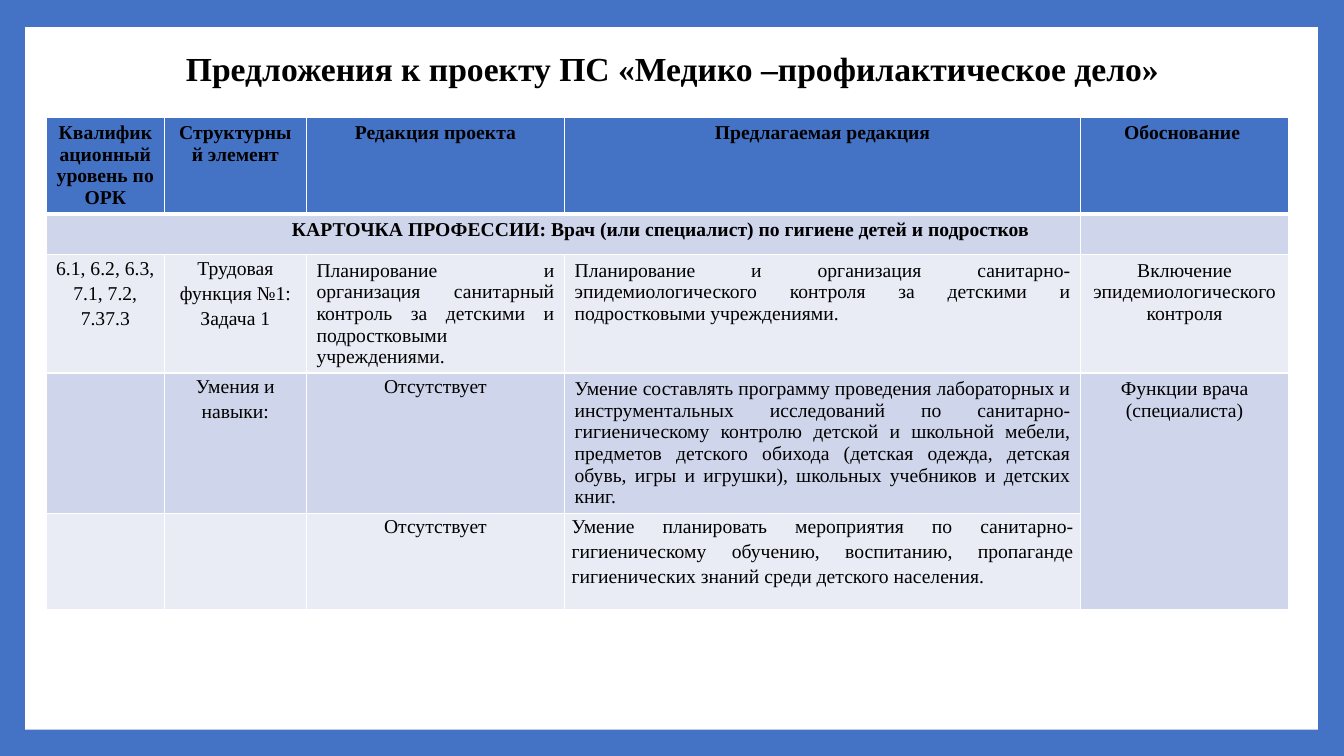
import pptx
import pptx.dml.color
import pptx.enum.shapes
import pptx.enum.text
import pptx.oxml
import pptx.oxml.ns
import pptx.util

Inches = pptx.util.Inches
Pt = pptx.util.Pt
RGBColor = pptx.dml.color.RGBColor
ALIGN = pptx.enum.text.PP_ALIGN

BLUE = RGBColor(0x44, 0x72, 0xC4)
BAND_DARK = RGBColor(0xCF, 0xD5, 0xEA)
BAND_LIGHT = RGBColor(0xE9, 0xEB, 0xF5)
WHITE = RGBColor(0xFF, 0xFF, 0xFF)
BLACK = RGBColor(0, 0, 0)

ROW_FILLS = [BLUE, BAND_DARK, BAND_LIGHT, BAND_DARK, BAND_LIGHT]
COL_WIDTHS = [1.17, 1.41, 2.56, 5.12, 2.06]
ROW_HEIGHTS = [0.79, 0.29, 0.8, 1.02, 0.96]
HEADER_LINE = 3
GRID_LINE = 1

TIGHT = {
    "margin_left": Inches(0.07),
    "margin_right": Inches(0.07),
    "margin_top": 0,
    "margin_bottom": 0,
}
BAND = {"margin_left": Inches(2.03)}

CENTER = {"alignment": ALIGN.CENTER}
JUSTIFY = {"alignment": ALIGN.JUSTIFY}
LOOSE = {"line_spacing": 1.15}

HEADERS = [
    "Квалификационный уровень по ОРК",
    "Структурный элемент",
    "Редакция проекта",
    "Предлагаемая редакция",
    "Обоснование ",
]
BODY = [
    (2, 0, ["6.1, 6.2, 6.3,", "7.1, 7.2, 7.37.3"], CENTER | LOOSE, TIGHT),
    (2, 1, ["Трудовая функция №1:", "Задача 1"], CENTER | LOOSE, TIGHT),
    (2, 2, ["Планирование и организация санитарный контроль за детскими "
            "и подростковыми учреждениями."], JUSTIFY, {}),
    (2, 3, ["Планирование и организация санитарно-эпидемиологического "
            "контроля за детскими и подростковыми учреждениями."], JUSTIFY, {}),
    (2, 4, ["Включение эпидемиологического контроля"], CENTER, {}),
    (3, 1, ["Умения и навыки:"], CENTER | LOOSE, TIGHT),
    (3, 2, ["Отсутствует"], CENTER | LOOSE, TIGHT),
    (3, 3, ["Умение составлять программу проведения лабораторных и "
            "инструментальных исследований по санитарно-гигиеническому "
            "контролю детской и школьной мебели, предметов детского обихода "
            "(детская одежда, детская обувь, игры и игрушки), школьных "
            "учебников и детских книг."], JUSTIFY, {}),
    (3, 4, ["Функции врача (специалиста)"], CENTER, {}),
    (4, 2, ["Отсутствует"], CENTER | LOOSE, TIGHT),
    (4, 3, ["Умение планировать мероприятия по санитарно-гигиеническому "
            "обучению, воспитанию, пропаганде гигиенических знаний среди "
            "детского населения."], JUSTIFY | LOOSE, TIGHT),
]


def apply(target, values):
    for name, value in values.items():
        setattr(target, name, value)


class SlideBuilder:
    font = {"name": "Times New Roman"}

    def __init__(self, prs):
        self.s = prs.slides.add_slide(prs.slide_layouts[5])

    def background(self, color):
        fill = self.s.background.fill
        fill.solid()
        fill.fore_color.rgb = color

    def text(self, tf, lines, size, bold, para):
        for i, line in enumerate(lines):
            p = tf.paragraphs[0] if i == 0 else tf.add_paragraph()
            apply(p, para)
            r = p.add_run()
            r.text = line
            apply(r.font, self.font | {"size": Pt(size), "bold": bold})
            r.font.color.rgb = BLACK

    def title(self, text, box):
        sp = self.s.shapes.title
        apply(sp, dict(zip(("left", "top", "width", "height"), map(Inches, box))))
        tf = sp.text_frame
        apply(tf, {"word_wrap": True,
                   "vertical_anchor": pptx.enum.text.MSO_ANCHOR.MIDDLE})
        self.text(tf, [text], 24, True, CENTER | {"line_spacing": 0.9})

    def panel(self, box, color):
        sp = self.s.shapes.add_shape(
            pptx.enum.shapes.MSO_SHAPE.RECTANGLE, *map(Inches, box))
        sp.shadow.inherit = False
        sp.fill.solid()
        sp.fill.fore_color.rgb = color
        sp.line.fill.background()
        self.s.shapes.title.element.addprevious(sp.element)

    def table(self, left, top):
        tbl = self.s.shapes.add_table(
            len(ROW_HEIGHTS), len(COL_WIDTHS), Inches(left), Inches(top),
            Inches(sum(COL_WIDTHS)), Inches(sum(ROW_HEIGHTS))).table
        for col, width in zip(tbl.columns, COL_WIDTHS):
            col.width = Inches(width)
        for i, (row, height) in enumerate(zip(tbl.rows, ROW_HEIGHTS)):
            row.height = Inches(height)
            for cell in row.cells:
                self.borders(cell, HEADER_LINE if i == 1 else GRID_LINE,
                             HEADER_LINE if i == 0 else GRID_LINE)
                cell.fill.solid()
                cell.fill.fore_color.rgb = ROW_FILLS[i]
        return tbl

    def borders(self, cell, top, bottom):
        tc_pr = cell._tc.get_or_add_tcPr()
        widths = {"L": GRID_LINE, "R": GRID_LINE, "T": top, "B": bottom}
        for side, width in widths.items():
            tc_pr.append(pptx.oxml.parse_xml(
                f'<a:ln{side} {pptx.oxml.ns.nsdecls("a")} w="{Pt(width)}">'
                f'<a:solidFill><a:srgbClr val="{WHITE}"/></a:solidFill>'
                f'</a:ln{side}>'))

    def cell(self, cell, lines, para, margins, bold=False):
        apply(cell, margins)
        self.text(cell.text_frame, lines, 14, bold, para)


def main():
    prs = pptx.Presentation()
    apply(prs, {"slide_width": Inches(13.33), "slide_height": Inches(7.5)})
    slide = SlideBuilder(prs)
    slide.background(BLUE)
    slide.panel((0.25, 0.27, 12.82, 6.97), WHITE)
    slide.title("Предложения к проекту ПС «Медико –профилактическое дело»",
                (0.92, 0.35, 11.5, 0.71))

    tbl = slide.table(0.46, 1.16)
    tbl.cell(1, 0).merge(tbl.cell(1, 3))
    tbl.cell(3, 4).merge(tbl.cell(4, 4))
    for col, header in enumerate(HEADERS):
        slide.cell(tbl.cell(0, col), [header], CENTER, {}, bold=True)
    slide.cell(tbl.cell(1, 0),
               ["КАРТОЧКА ПРОФЕССИИ: Врач (или специалист) "
                "по гигиене детей и подростков"], CENTER, BAND, bold=True)
    for row, col, lines, para, margins in BODY:
        slide.cell(tbl.cell(row, col), lines, para, margins)
    prs.save("out.pptx")


if __name__ == "__main__":
    main()
